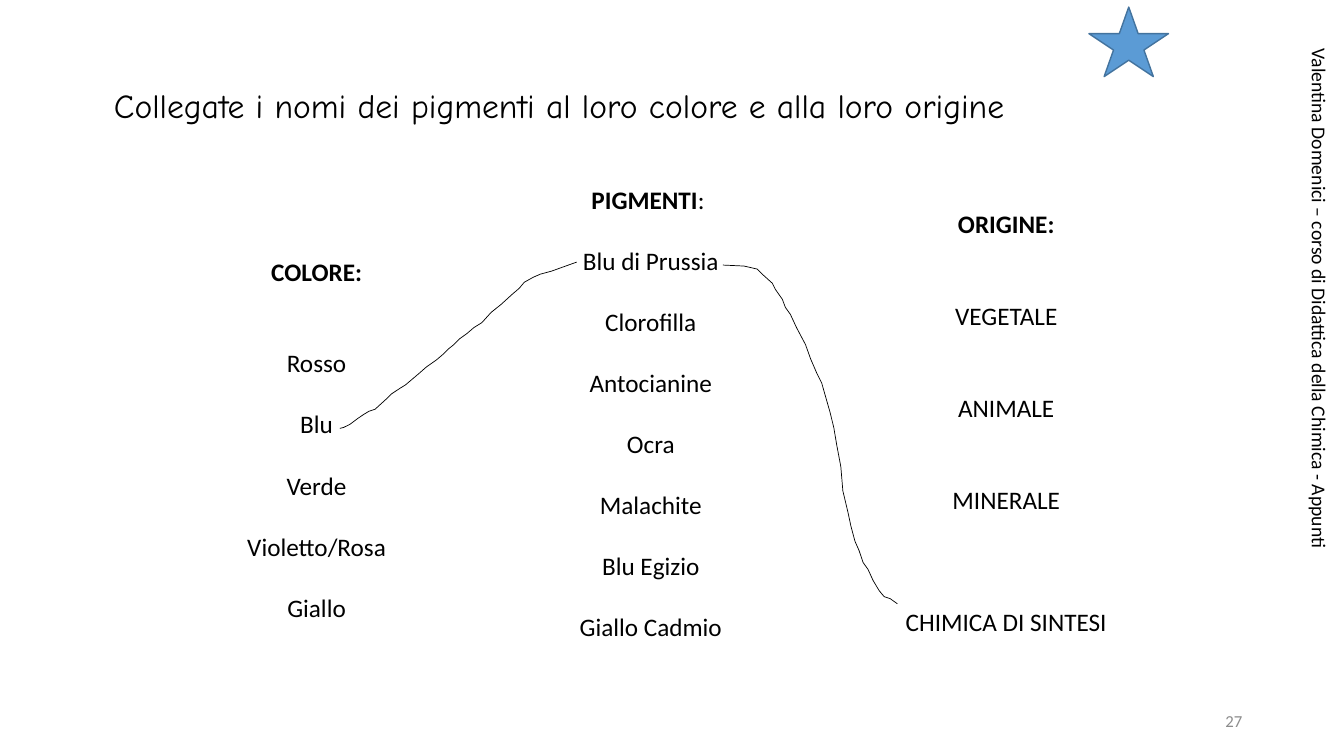
from pptx import Presentation
from pptx.dml.color import RGBColor
from pptx.enum import shapes, text
from pptx.util import Inches, Pt

COLORS = {"ink": "000000", "star": "5B9BD5", "edge": "43739E", "number": "8C8C8C"}
ROW = 22

PIGMENTS = [("Blu di Prussia", 1), ("Clorofilla", 1), ("Antocianine", 1), ("Ocra", 1),
            ("Malachite", 1), ("Blu Egizio", 1), ("Giallo Cadmio", 1)]
HUES = [("Rosso", 2), ("Blu", 1), ("Verde", 1), ("Violetto/Rosa", 1), ("Giallo", 1)]
ORIGINS = [("VEGETALE", 2), ("ANIMALE", 2), ("MINERALE", 2), ("CHIMICA DI SINTESI", 3)]

TO_ORIGIN = [(0, 0), (21, 1), (34, 4), (39, 9), (49, 18), (52, 24), (59, 34), (62, 42),
             (67, 49), (73, 62), (82, 79), (87, 93), (93, 107), (98, 117), (102, 131),
             (106, 145), (110, 161), (113, 179), (117, 200), (119, 224), (124, 245),
             (127, 259), (131, 274), (135, 283), (139, 295), (144, 302), (149, 313),
             (155, 323), (160, 329), (166, 331), (173, 336)]
TO_HUE = [(235, 1), (210, 10), (199, 13), (192, 16), (183, 21), (178, 27), (171, 33),
          (160, 43), (150, 51), (141, 61), (133, 66), (126, 72), (119, 77), (113, 83),
          (108, 87), (103, 92), (96, 98), (86, 105), (78, 112), (65, 123), (60, 126),
          (51, 132), (46, 137), (35, 147), (29, 149), (24, 152), (18, 156), (10, 162),
          (4, 165), (0, 166)]


def color(name):
    """Return the named colour."""
    return RGBColor.from_string(COLORS[name])


def add_run(p, words, size=18, font="Calibri", ink="ink", bold=False):
    """Append formatted text to a paragraph."""
    r = p.add_run()
    r.text = words
    r.font.size, r.font.name, r.font.bold = Pt(size), font, bold
    r.font.color.rgb = color(ink)


def add_box(s, box, wrap=False, anchor=text.MSO_ANCHOR.TOP):
    """Add an empty text box and return it."""
    sp = s.shapes.add_textbox(*map(Inches, box))
    sp.text_frame.word_wrap = wrap
    sp.text_frame.vertical_anchor = anchor
    return sp


def add_title(s, box, words):
    """Place the title placeholder."""
    sp = s.shapes.title
    sp.left, sp.top, sp.width, sp.height = map(Inches, box)
    tf = sp.text_frame
    tf.vertical_anchor = text.MSO_ANCHOR.MIDDLE
    p = tf.paragraphs[0]
    p.alignment, p.line_spacing = text.PP_ALIGN.LEFT, 0.9
    add_run(p, words, size=24, font="Comic Neue")


def add_star(s, box):
    """Draw the star marker."""
    sp = s.shapes.add_shape(shapes.MSO_SHAPE.STAR_5_POINT, *map(Inches, box))
    sp.shadow.inherit = False
    sp.fill.solid()
    sp.fill.fore_color.rgb = color("star")
    sp.line.color.rgb = color("edge")
    sp.line.width = Pt(1)


def add_column(s, box, heading, items, tail=""):
    """Fill a centred column; each item has the rows skipped above it."""
    tf = add_box(s, box).text_frame
    p = tf.paragraphs[0]
    p.alignment = text.PP_ALIGN.CENTER
    add_run(p, heading, bold=True)
    if tail:
        add_run(p, tail)
    for words, skipped in items:
        p = tf.add_paragraph()
        p.alignment = text.PP_ALIGN.CENTER
        p.space_before = Pt(ROW * skipped)
        add_run(p, words)


def add_link(s, left, top, points):
    """Draw a hand-drawn link from points in hundredths of an inch."""
    fb = s.shapes.build_freeform(*points[0], scale=Inches(0.01))
    fb.add_line_segments(points[1:], close=False)
    sp = fb.convert_to_shape(Inches(left), Inches(top))
    sp.shadow.inherit = False
    sp.fill.background()
    sp.line.color.rgb = color("ink")
    sp.line.width = Pt(0.5)


def add_number(s, box, words):
    """Place the page number."""
    p = add_box(s, box, wrap=True, anchor=text.MSO_ANCHOR.MIDDLE).text_frame.paragraphs[0]
    p.alignment = text.PP_ALIGN.RIGHT
    add_run(p, words, size=12, ink="number")


def add_credit(s, box, words):
    """Place the course line, turned to read downwards."""
    sp = add_box(s, box)
    sp.rotation = 90
    p = sp.text_frame.paragraphs[0]
    p.alignment = text.PP_ALIGN.LEFT
    add_run(p, words, size=14)


def main():
    """Build and save the slide."""
    prs = Presentation()
    prs.slide_width, prs.slide_height = Inches(13.33), Inches(7.5)
    s = prs.slides.add_slide(prs.slide_layouts[5])
    add_title(s, (1.03, 0.52, 9.91, 1.1),
              "Collegate i nomi dei pigmenti al loro colore e alla loro origine")
    add_star(s, (10.8, 0.07, 0.79, 0.69))
    add_column(s, (5.64, 1.78, 1.63, 4.95), "PIGMENTI", PIGMENTS, tail=": ")
    add_column(s, (2.34, 2.49, 1.6, 3.74), "COLORE:", HUES)
    add_column(s, (8.87, 2.02, 2.22, 4.95), "ORIGINE:", ORIGINS)
    add_link(s, 7.17, 2.63, TO_ORIGIN)
    add_link(s, 3.37, 2.59, TO_HUE)
    add_number(s, (9.42, 6.95, 3, 0.4), "27")
    add_credit(s, (9.95, 3.35, 6.27, 0.34),
               "Valentina Domenici – corso di Didattica della Chimica - Appunti")
    prs.save("out.pptx")


if __name__ == "__main__":
    main()
